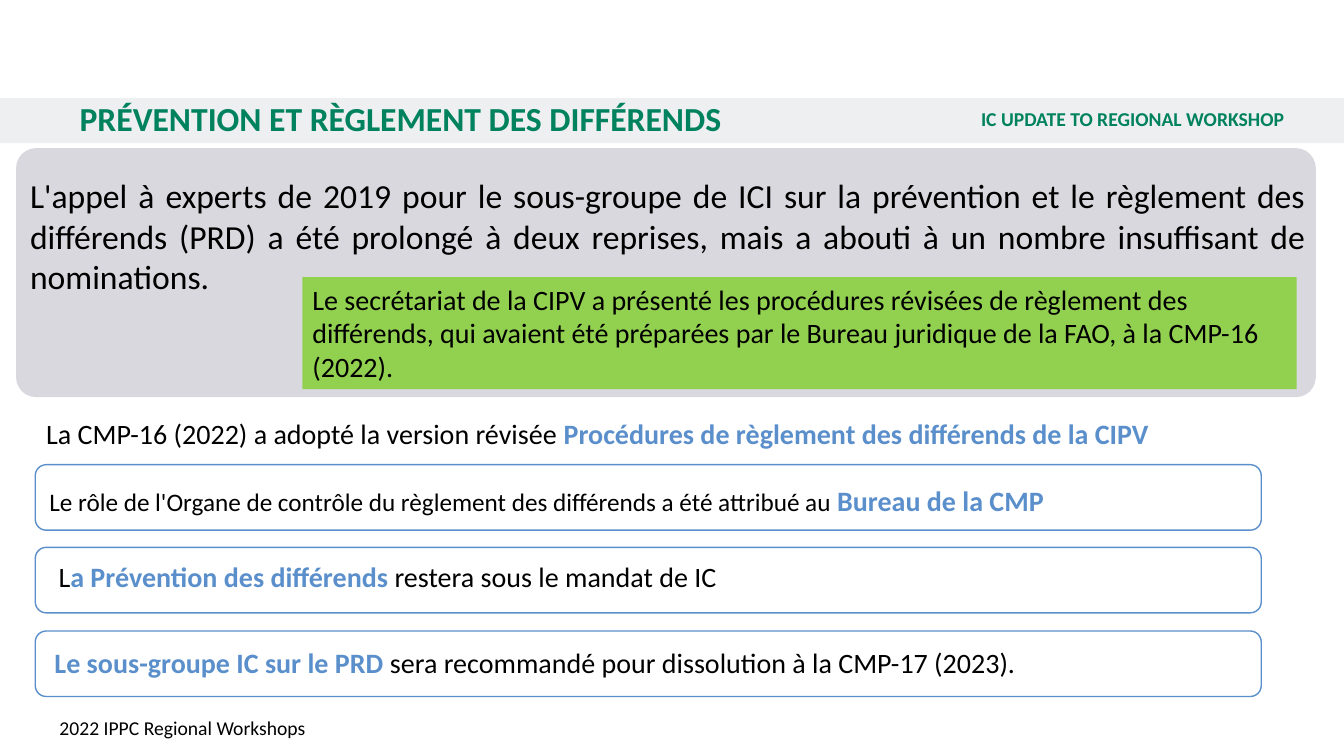
from dataclasses import dataclass

import pptx
import pptx.dml.color
import pptx.enum.shapes
import pptx.enum.text
import pptx.oxml.ns
import pptx.util
from lxml import etree

SHAPE = pptx.enum.shapes.MSO_SHAPE
ALIGN = pptx.enum.text.PP_ALIGN
ANCHOR = pptx.enum.text.MSO_ANCHOR
EMU_PER_PX = 9144
FONT = "Calibri"
BLACK, GREEN, BLUE = "000000", "00825F", "5A8FCB"


@dataclass(frozen=True)
class Box:
    left: int
    top: int
    width: int
    height: int


@dataclass(frozen=True)
class Run:
    text: str
    size: int = 20
    color: str = BLACK
    bold: bool = False


@dataclass(frozen=True)
class Text:
    box: Box
    runs: tuple[Run, ...]
    insets: tuple[int, int, int, int] = (10, 5, 10, 5)
    anchor: ANCHOR = ANCHOR.TOP
    align: ALIGN = ALIGN.LEFT
    spacing: float = 1.0


@dataclass(frozen=True)
class Panel:
    box: Box
    kind: SHAPE
    fill: str | None = None
    line: str | None = None
    opacity: int = 100
    corner: float | None = None


def px(n: int) -> pptx.util.Emu:
    return pptx.util.Emu(n * EMU_PER_PX)


def rgb(color: str) -> pptx.dml.color.RGBColor:
    return pptx.dml.color.RGBColor.from_string(color)


def frame(box: Box) -> tuple[pptx.util.Emu, ...]:
    return px(box.left), px(box.top), px(box.width), px(box.height)


def draw_panel(s: pptx.slide.Slide, panel: Panel) -> None:
    sp = s.shapes.add_shape(panel.kind, *frame(panel.box))
    sp.shadow.inherit = False
    if panel.corner is not None:
        sp.adjustments[0] = panel.corner
    if panel.fill:
        sp.fill.solid()
        sp.fill.fore_color.rgb = rgb(panel.fill)
    else:
        sp.fill.background()
    if panel.opacity < 100:
        qn = pptx.oxml.ns.qn
        color = sp.fill._xPr.find(qn("a:solidFill")).find(qn("a:srgbClr"))
        etree.SubElement(color, qn("a:alpha"), val=str(panel.opacity * 1000))
    if panel.line:
        sp.line.color.rgb = rgb(panel.line)
        sp.line.width = pptx.util.Pt(1)
    else:
        sp.line.fill.background()


def draw_text(s: pptx.slide.Slide, text: Text) -> None:
    tf = s.shapes.add_textbox(*frame(text.box)).text_frame
    tf.word_wrap = True
    tf.vertical_anchor = text.anchor
    tf.margin_left, tf.margin_top, tf.margin_right, tf.margin_bottom = map(px, text.insets)
    p = tf.paragraphs[0]
    p.alignment = text.align
    p.line_spacing = text.spacing
    for run in text.runs:
        r = p.add_run()
        r.text = run.text
        r.font.name = FONT
        r.font.size = pptx.util.Pt(run.size)
        r.font.bold = run.bold
        r.font.color.rgb = rgb(run.color)


HEADER = Box(0, 97, 1333, 45)
NOTICE = Box(300, 275, 986, 111)
WIDE_INSETS = (59, 5, 59, 5)

PANELS = (
    Panel(HEADER, SHAPE.RECTANGLE, fill="D8D9DC", opacity=42),
    Panel(Box(16, 147, 1289, 247), SHAPE.ROUNDED_RECTANGLE, fill="D8D8DE", corner=0.08),
    Panel(NOTICE, SHAPE.RECTANGLE, fill="92D050"),
    *(
        Panel(Box(35, top, 1216, 65), SHAPE.ROUNDED_RECTANGLE, line=BLUE)
        for top in (461, 543, 626)
    ),
)

TEXTS = (
    Text(
        Box(0, 706, 1333, 35), (Run("2022 IPPC Regional Workshops", 14),),
        WIDE_INSETS, ANCHOR.MIDDLE, spacing=0.9,
    ),
    Text(
        HEADER, (Run("IC UPDATE TO REGIONAL WORKSHOP", 14, GREEN, True),),
        WIDE_INSETS, ANCHOR.MIDDLE, ALIGN.RIGHT, 0.9,
    ),
    Text(
        Box(20, 102, 814, 27),
        (Run("PRÉVENTION ET RÈGLEMENT DES DIFFÉRENDS", 24, GREEN, True),),
        (59, 0, 39, 5), spacing=0.9,
    ),
    Text(
        Box(20, 169, 1285, 131),
        (Run(
            "L'appel à experts de 2019 pour le sous-groupe de ICI sur la prévention et le "
            "règlement des différends (PRD) a été prolongé à deux reprises, mais a abouti à "
            "un nombre insuffisant de nominations.", 24,
        ),),
        align=ALIGN.JUSTIFY,
    ),
    Text(
        NOTICE,
        (Run(
            "Le secrétariat de la CIPV a présenté les procédures révisées de règlement des "
            "différends, qui avaient été préparées par le Bureau juridique de la FAO, à la "
            "CMP-16 (2022).",
        ),),
    ),
    Text(
        Box(36, 408, 1231, 44),
        (
            Run("La CMP-16 (2022) a adopté la version révisée "),
            Run("Procédures de règlement des différends de la CIPV", color=BLUE, bold=True),
        ),
    ),
    Text(
        Box(0, 444, 1230, 74),
        (
            Run("Le rôle de l'Organe de contrôle du règlement des différends a été attribué au ", 18),
            Run("Bureau de la CMP", color=BLUE, bold=True),
        ),
        (49, 5, 10, 5), ANCHOR.BOTTOM,
    ),
    Text(
        Box(9, 550, 1229, 44),
        (
            Run("L"),
            Run("a Prévention des différends ", color=BLUE, bold=True),
            Run("restera sous le mandat de IC"),
        ),
        (49, 5, 10, 5),
    ),
    Text(
        Box(0, 607, 1238, 83),
        (
            Run("Le sous-groupe IC sur le PRD ", color=BLUE, bold=True),
            Run("sera recommandé pour dissolution à la CMP-17 (2023)."),
        ),
        (54, 37, 39, 5), spacing=0.9,
    ),
)


def main() -> None:
    prs = pptx.Presentation()
    prs.slide_width, prs.slide_height = px(1333), px(750)
    s = prs.slides.add_slide(prs.slide_layouts[6])
    for panel in PANELS:
        draw_panel(s, panel)
    for text in TEXTS:
        draw_text(s, text)
    prs.save("out.pptx")


if __name__ == "__main__":
    main()
